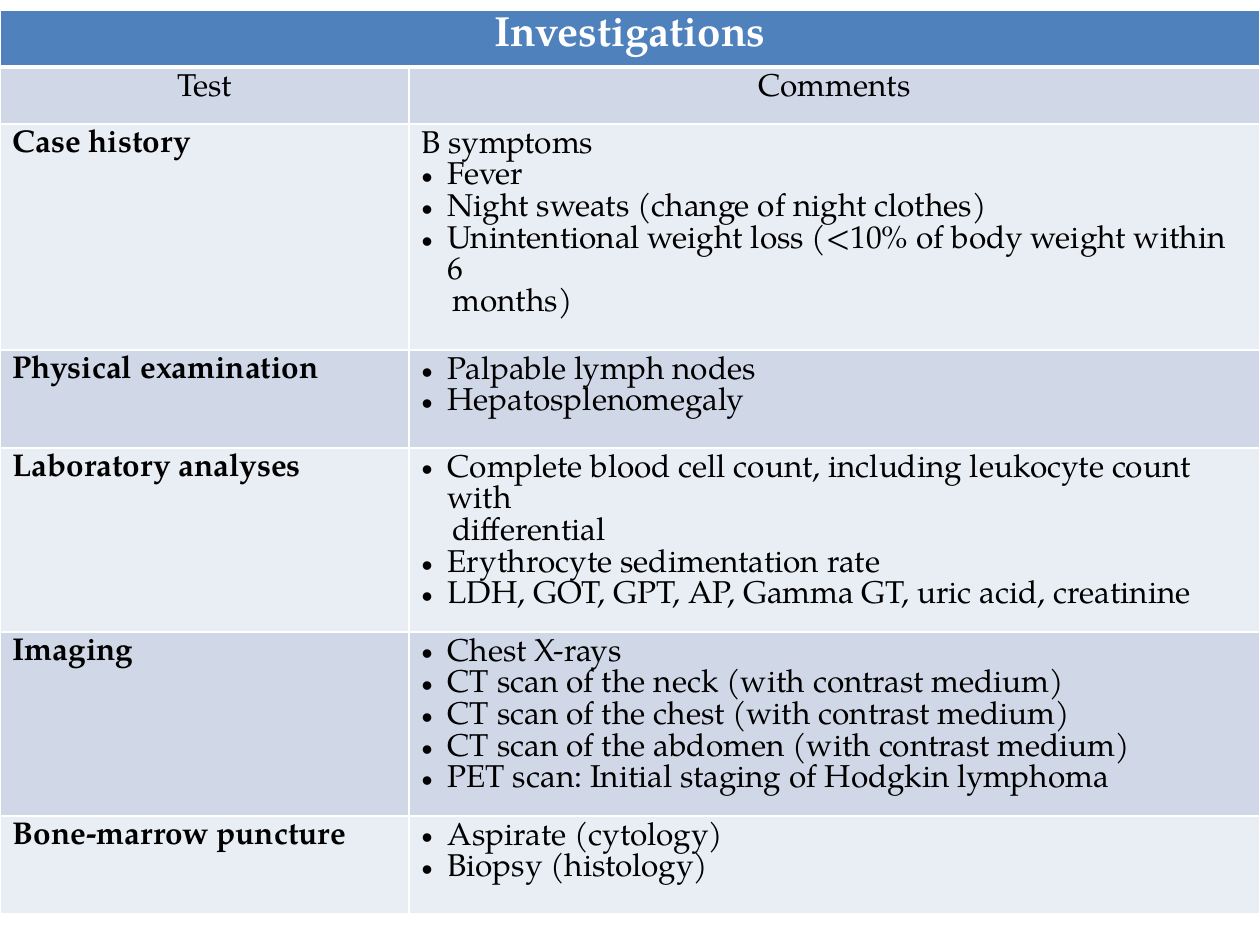
from lxml.etree import SubElement as Sub
from pptx import Presentation
from pptx.dml.color import RGBColor as RGB
from pptx.enum.text import PP_ALIGN as Align
from pptx.oxml.ns import qn
from pptx.util import Pt

PX = 914400 // 126
FONT = "TeX Gyre Pagella"
WHITE = RGB(0xFF, 0xFF, 0xFF)
BLACK = RGB(0, 0, 0)
BLUE = RGB(0x4F, 0x81, 0xBD)
DARK = RGB(0xD0, 0xD8, 0xE8)
LIGHT = RGB(0xE9, 0xED, 0xF4)

# Each comment line: bullet "•", indented "+" or plain ""
TESTS = [
    ("Case history", [
        ("", "B symptoms"),
        ("•", "Fever"),
        ("•", "Night sweats (change of night clothes)"),
        ("•", "Unintentional weight loss (<10% of body weight within 6"),
        ("+", "months)")]),
    ("Physical examination", [
        ("•", "Palpable lymph nodes"),
        ("•", "Hepatosplenomegaly")]),
    ("Laboratory analyses", [
        ("•", "Complete blood cell count, including leukocyte count with"),
        ("+", "differential"),
        ("•", "Erythrocyte sedimentation rate"),
        ("•", "LDH, GOT, GPT, AP, Gamma GT, uric acid, creatinine")]),
    ("Imaging", [
        ("•", "Chest X-rays"),
        ("•", "CT scan of the neck (with contrast medium)"),
        ("•", "CT scan of the chest (with contrast medium)"),
        ("•", "CT scan of the abdomen (with contrast medium)"),
        ("•", "PET scan: Initial staging of Hodgkin lymphoma")]),
    ("Bone-marrow puncture", [
        ("•", "Aspirate (cytology)"),
        ("•", "Biopsy (histology)")]),
]


def style(cell, fill, base=1):
    """Fill a cell and rule its four sides in white."""
    props = cell._tc.get_or_add_tcPr()
    for side, width in (("L", 1), ("R", 1), ("T", 1), ("B", base)):
        line = Sub(props, qn(f"a:ln{side}"), w=str(Pt(width)))
        Sub(Sub(line, qn("a:solidFill")), qn("a:srgbClr"), val=str(WHITE))
    cell.fill.solid()
    cell.fill.fore_color.rgb = fill


def write(para, text, size=18, bold=False, color=BLACK, align=Align.LEFT):
    """Add one run of text to a paragraph."""
    para.alignment = align
    run = para.add_run()
    run.text = text
    font = run.font
    font.name, font.size, font.bold = FONT, Pt(size), bold
    font.color.rgb = color


deck = Presentation()
deck.slide_width, deck.slide_height = 1260 * PX, 945 * PX
slide = deck.slides.add_slide(deck.slide_layouts[6])

# Table grid
cols = [409, 851]
rows = [57, 57, 226, 98, 184, 184, 98]
frame = slide.shapes.add_table(len(rows), len(cols), 0, 10 * PX,
                               sum(cols) * PX, sum(rows) * PX)
table = frame.table
for col, width in zip(table.columns, cols):
    col.width = width * PX
for row, height in zip(table.rows, rows):
    row.height = height * PX

# Title row
title = table.cell(0, 0)
title.merge(table.cell(0, 1))
for cell in table.rows[0].cells:
    style(cell, BLUE, 3)
write(title.text_frame.paragraphs[0], "Investigations", 24, True, WHITE, Align.CENTER)

# Column heads
for cell, head in zip(table.rows[1].cells, ("Test", "Comments")):
    style(cell, DARK)
    write(cell.text_frame.paragraphs[0], head, align=Align.CENTER)

# Tests with their comments
for i, (test, notes) in enumerate(TESTS, 2):
    left, right = table.rows[i].cells
    for cell in (left, right):
        style(cell, LIGHT if i % 2 == 0 else DARK)
    write(left.text_frame.paragraphs[0], test, bold=True)
    box = right.text_frame
    for j, (mark, note) in enumerate(notes):
        para = box.add_paragraph() if j else box.paragraphs[0]
        props = para._p.get_or_add_pPr()
        if mark == "•":
            props.set("marL", str(26 * PX))
            props.set("indent", str(-26 * PX))
            Sub(props, qn("a:buFont"), typeface="Arial")
            Sub(props, qn("a:buChar"), char=mark)
        elif mark == "+":
            props.set("marL", str(31 * PX))
        write(para, note)

deck.save("out.pptx")
